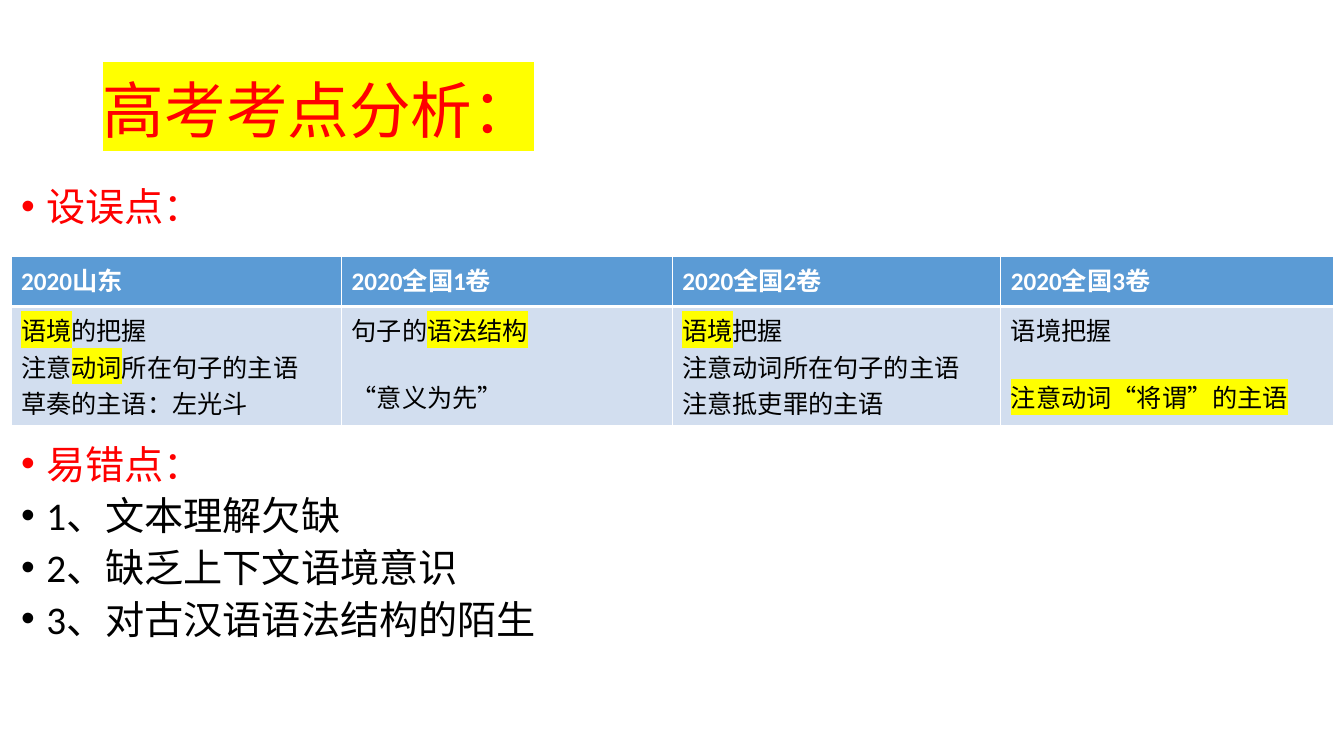
from typing import NamedTuple

from lxml import etree
from pptx import Presentation
from pptx import util as u
from pptx.dml.color import RGBColor
from pptx.enum import text
from pptx.oxml import ns

FONT = "Calibri"
RED, YELLOW, WHITE, BLACK = "FF0000", "FFFF00", "FFFFFF", "000000"
HEADER_BLUE, ROW_BLUE = "5B9BD5", "D2DEEF"


class Piece(NamedTuple):
    words: str
    marked: bool = False


class Line(NamedTuple):
    pieces: list[Piece]
    space_before: float = 0


class Point(NamedTuple):
    words: str
    color: str = BLACK
    space_before: float = 10


class ExamPaper(NamedTuple):
    name: str
    width: float
    lines: list[Line]


LINE_GAP = 22    # room of one line between the notes in a cell
TABLE_GAP = 157  # room for the table between the list points

PAPERS = [
    ExamPaper("2020山东", 8.33, [
        Line([Piece("语境", True), Piece("的把握")]),
        Line([Piece("注意"), Piece("动词", True), Piece("所在句子的主语")]),
        Line([Piece("草奏的主语：左光斗")]),
    ]),
    ExamPaper("2020全国1卷", 8.33, [
        Line([Piece("句子的"), Piece("语法结构", True)]),
        Line([Piece("“意义为先”")], LINE_GAP),
    ]),
    ExamPaper("2020全国2卷", 8.28, [
        Line([Piece("语境", True), Piece("把握")]),
        Line([Piece("注意动词所在句子的主语")]),
        Line([Piece("注意抵吏罪的主语")]),
    ]),
    ExamPaper("2020全国3卷", 8.38, [
        Line([Piece("语境把握")]),
        Line([Piece("注意动词“将谓”的主语", True)], LINE_GAP),
    ]),
]

POINTS = [
    Point("设误点：", RED, 0),
    Point("易错点：", RED, TABLE_GAP),
    Point("1、文本理解欠缺"),
    Point("2、缺乏上下文语境意识"),
    Point("3、对古汉语语法结构的陌生"),
]


def rgb(value: str) -> RGBColor:
    return RGBColor.from_string(value)


def add_color(parent, tag: str, value: str) -> None:
    holder = etree.SubElement(parent, ns.qn(tag))
    etree.SubElement(holder, ns.qn("a:srgbClr")).set("val", value)


def place(shape, left: float, top: float, width: float, height: float) -> None:
    shape.left, shape.top = u.Cm(left), u.Cm(top)
    shape.width, shape.height = u.Cm(width), u.Cm(height)


def add_run(paragraph, piece: Piece, size: float, color: str, bold: bool = False) -> None:
    run = paragraph.add_run()
    run.text = piece.words
    run.font.size = u.Pt(size)
    run.font.bold = bold
    run.font.color.rgb = rgb(color)
    run.font.name = FONT
    if piece.marked:
        properties = run.font._element
        add_color(properties, "a:highlight", YELLOW)
        properties.find(ns.qn("a:latin")).addprevious(properties[-1])


def add_bullet(paragraph) -> None:
    properties = paragraph._p.get_or_add_pPr()
    properties.set("marL", str(u.Cm(0.635)))
    properties.set("indent", str(-u.Cm(0.635)))
    etree.SubElement(properties, ns.qn("a:buFont")).set("typeface", "Arial")
    etree.SubElement(properties, ns.qn("a:buChar")).set("char", "•")


def fill_cell(cell, lines: list[Line], fill: str, color: str, bold: bool,
              top_border: float, bottom_border: float) -> None:
    cell.fill.solid()
    cell.fill.fore_color.rgb = rgb(fill)
    properties = cell._tc.get_or_add_tcPr()
    borders = {"a:lnL": 1, "a:lnR": 1, "a:lnT": top_border, "a:lnB": bottom_border}
    for position, (side, width) in enumerate(borders.items()):
        border = etree.Element(ns.qn(side), w=str(u.Pt(width)))
        add_color(border, "a:solidFill", WHITE)
        properties.insert(position, border)
    for index, line in enumerate(lines):
        frame = cell.text_frame
        paragraph = frame.add_paragraph() if index else frame.paragraphs[0]
        paragraph.space_before = u.Pt(line.space_before)
        for piece in line.pieces:
            add_run(paragraph, piece, 18, color, bold)


def add_title(slide) -> None:
    heading = slide.shapes.title
    place(heading, 2.34, 1.02, 29.21, 3.68)
    heading.text_frame.vertical_anchor = text.MSO_ANCHOR.MIDDLE
    heading.text_frame.auto_size = text.MSO_AUTO_SIZE.NONE
    paragraph = heading.text_frame.paragraphs[0]
    paragraph.alignment = text.PP_ALIGN.LEFT
    paragraph.line_spacing = 0.9
    add_run(paragraph, Piece("高考考点分析：", True), 44, RED)


def add_points(slide) -> None:
    body = slide.placeholders[1]
    place(body, 0.28, 4.7, 31.27, 12.47)
    frame = body.text_frame
    frame.auto_size = text.MSO_AUTO_SIZE.NONE
    for index, point in enumerate(POINTS):
        paragraph = frame.add_paragraph() if index else frame.paragraphs[0]
        add_bullet(paragraph)
        paragraph.line_spacing = 0.8
        paragraph.space_before = u.Pt(point.space_before)
        add_run(paragraph, Piece(point.words), 28, point.color)


def add_papers(slide) -> None:
    papers = slide.shapes.add_table(
        2, len(PAPERS), u.Cm(0.28), u.Cm(6.45), u.Cm(33.32), u.Cm(4.09)).table
    papers.rows[0].height, papers.rows[1].height = u.Cm(1.27), u.Cm(2.82)
    for column, paper in enumerate(PAPERS):
        papers.columns[column].width = u.Cm(paper.width)
        fill_cell(papers.cell(0, column), [Line([Piece(paper.name)])],
                  HEADER_BLUE, WHITE, True, 1, 3)
        fill_cell(papers.cell(1, column), paper.lines, ROW_BLUE, BLACK, False, 3, 1)


def main() -> None:
    deck = Presentation()
    deck.slide_width, deck.slide_height = u.Cm(33.87), u.Cm(19.05)
    slide = deck.slides.add_slide(deck.slide_layouts[1])
    add_title(slide)
    add_points(slide)
    add_papers(slide)
    deck.save("out.pptx")


if __name__ == "__main__":
    main()
